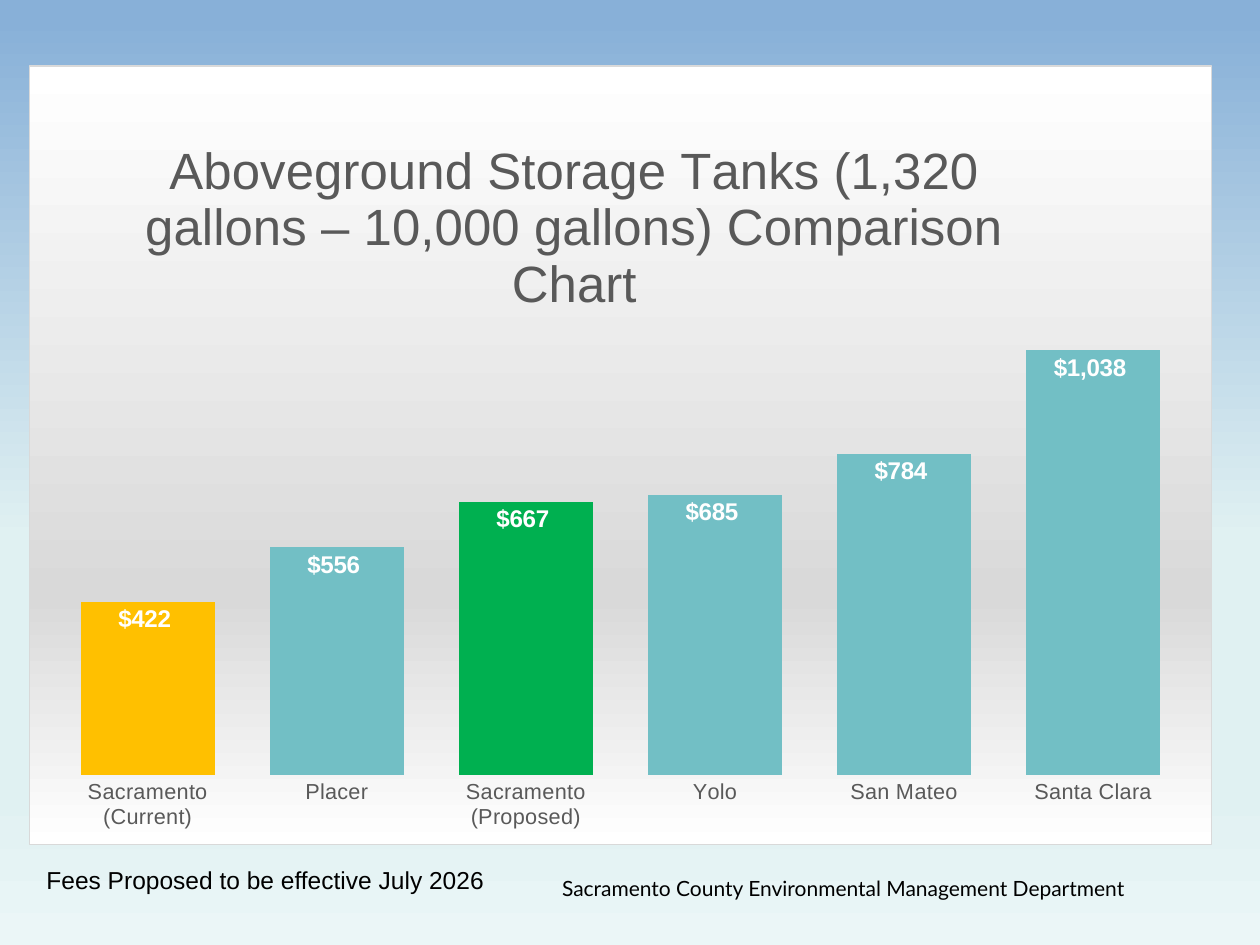
from pptx import Presentation
from pptx.chart.data import CategoryChartData
from pptx.dml.color import RGBColor
from pptx.enum.chart import XL_CHART_TYPE as ChartType
from pptx.enum.chart import XL_LABEL_POSITION as LabelPosition
from pptx.enum.chart import XL_TICK_LABEL_POSITION as TickLabelPosition
from pptx.enum.chart import XL_TICK_MARK as TickMark
from pptx.enum.text import PP_ALIGN as Align
from pptx.oxml import parse_xml
from pptx.oxml.ns import nsdecls, qn
from pptx.util import Inches, Pt

WIDTH, HEIGHT = Inches(10), Inches(7.5)
COLORS = {
    "text": "000000", "muted": "595959", "label": "FFFFFF", "border": "D9D9D9",
    "county": "72BFC5", "current": "FFC000", "proposed": "00B050",
}
BACKGROUND_STOPS = [(0, "88B0D8"), (2, "88B0D8"), (57, "E0F1F2"), (83, "E0F1F2"), (100, "EBF6F7")]
CHART_STOPS = [(0, "FFFFFF"), (68, "D9D9D9"), (100, "FFFFFF")]
MONEY = '"$"#,##0_);[Red]\\("$"#,##0\\)'
TITLE = "Aboveground Storage Tanks (1,320 gallons – 10,000 gallons) Comparison Chart"
FEES = {
    "Sacramento (Current)": 422, "Placer": 556, "Sacramento (Proposed)": 667,
    "Yolo": 685, "San Mateo": 784, "Santa Clara": 1038,
}
HIGHLIGHTS = {"Sacramento (Current)": "current", "Sacramento (Proposed)": "proposed"}


def percent_box(left, top, width, height):
    return [int(share * size / 100) for share, size in
            zip((left, top, width, height), (WIDTH, HEIGHT, WIDTH, HEIGHT))]


def format_font(font, size, color="text", name="Arial", bold=False):
    font.size, font.name, font.bold = Pt(size), name, bold
    font.color.rgb = RGBColor.from_string(COLORS[color])


def gradient_xml(stops):
    marks = "".join(f'<a:gs pos="{position * 1000}"><a:srgbClr val="{color}"/></a:gs>'
                    for position, color in stops)
    return f'<a:gradFill><a:gsLst>{marks}</a:gsLst><a:lin ang="5400000" scaled="0"/></a:gradFill>'


def set_background(slide, stops):
    slide._element.cSld.insert(0, parse_xml(
        f'<p:bg {nsdecls("p", "a")}><p:bgPr>{gradient_xml(stops)}<a:effectLst/></p:bgPr></p:bg>'))


def add_text(slide, text, box, align=Align.LEFT, **font_format):
    frame = slide.shapes.add_textbox(*percent_box(*box)).text_frame
    frame.word_wrap = True
    paragraph = frame.paragraphs[0]
    paragraph.text, paragraph.alignment = text, align
    format_font(paragraph.runs[0].font, **font_format)


def set_layout(element, target="", **shares):
    target_xml = f'<c:layoutTarget val="{target}"/>' if target else ""
    modes = "".join(f'<c:{key}Mode val="edge"/>' for key in ("x", "y"))
    values = "".join(f'<c:{key} val="{value}"/>' for key, value in shares.items())
    layout = parse_xml(f'<c:layout {nsdecls("c")}><c:manualLayout>{target_xml}{modes}{values}'
                       '</c:manualLayout></c:layout>')
    for old in element.findall(qn("c:layout")):
        element.remove(old)
    text = element.find(qn("c:tx"))
    if text is None:
        element.insert(0, layout)
    else:
        text.addnext(layout)


def paint_chart_area(chart):
    chart._chartSpace.chart.addnext(parse_xml(
        f'<c:spPr {nsdecls("c", "a")}>{gradient_xml(CHART_STOPS)}<a:ln w="9525"><a:solidFill>'
        f'<a:srgbClr val="{COLORS["border"]}"/></a:solidFill></a:ln></c:spPr>'))


def fill_solid(target, color):
    target.format.fill.solid()
    target.format.fill.fore_color.rgb = RGBColor.from_string(COLORS[color])


def style_title(chart):
    chart.has_title = True
    title = chart.chart_title
    title.include_in_layout = False
    title.text_frame.text = TITLE
    format_font(title.text_frame.paragraphs[0].runs[0].font, 29.1, "muted")
    set_layout(title._element, x=0.09, y=0.08)


def style_axes(chart):
    values = chart.value_axis
    values.minimum_scale, values.maximum_scale = 0, 1200
    values.has_major_gridlines = False
    values.visible = False
    categories = chart.category_axis
    categories.major_tick_mark = categories.minor_tick_mark = TickMark.NONE
    categories.tick_label_position = TickLabelPosition.NEXT_TO_AXIS
    categories.format.line.fill.background()
    format_font(categories.tick_labels.font, 12.4, "muted")


def style_bars(plot):
    plot.gap_width = 41
    plot.vary_by_categories = False
    series = plot.series[0]
    series.invert_if_negative = False
    fill_solid(series, "county")
    for index, county in enumerate(FEES):
        if county in HIGHLIGHTS:
            fill_solid(series.points[index], HIGHLIGHTS[county])
    labels = series.data_labels
    labels.show_value = True
    labels.position = LabelPosition.INSIDE_END
    labels.number_format, labels.number_format_is_linked = MONEY, False
    format_font(labels.font, 13.8, "label", bold=True)


def add_fee_chart(slide, box):
    data = CategoryChartData(number_format=MONEY)
    data.categories = list(FEES)
    data.add_series("Series 1", list(FEES.values()))
    frame = slide.shapes.add_chart(ChartType.COLUMN_CLUSTERED, *percent_box(*box), data)
    chart = frame.chart
    chart.has_legend = False
    format_font(chart.font, 10)
    paint_chart_area(chart)
    style_title(chart)
    style_axes(chart)
    style_bars(chart.plots[0])
    set_layout(chart._chartSpace.chart.plotArea, "inner", x=0.02, y=0.28, w=0.96, h=0.63)


def main():
    presentation = Presentation()
    presentation.slide_width, presentation.slide_height = WIDTH, HEIGHT
    slide = presentation.slides.add_slide(presentation.slide_layouts[6])
    set_background(slide, BACKGROUND_STOPS)
    add_text(slide, "Fees Proposed to be effective July 2026", (2.7, 90.93, 39.8, 4.67), size=14)
    add_text(slide, "Sacramento County Environmental Management Department",
             (30, 92, 73.9, 6.67), align=Align.CENTER, size=12, name="Lato")
    add_fee_chart(slide, (2.3, 6.93, 93.9, 82.53))
    presentation.save("out.pptx")


if __name__ == "__main__":
    main()
